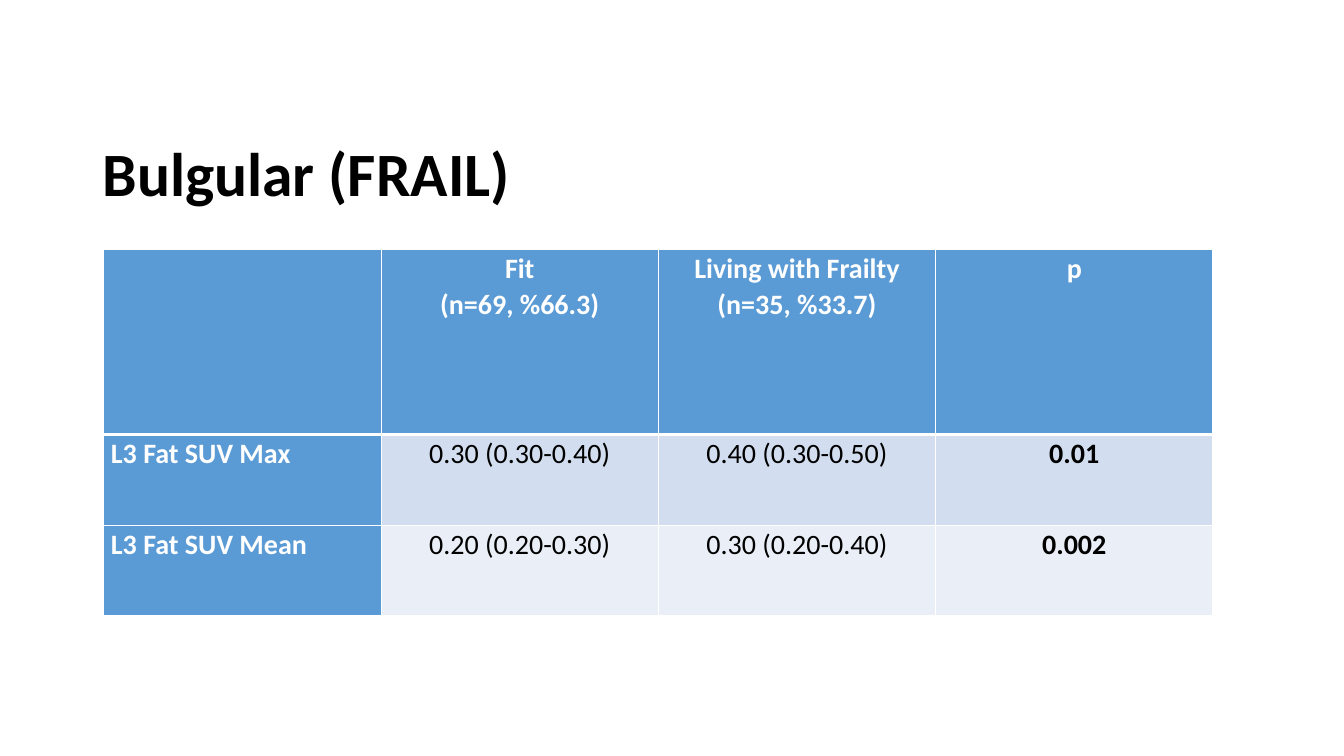
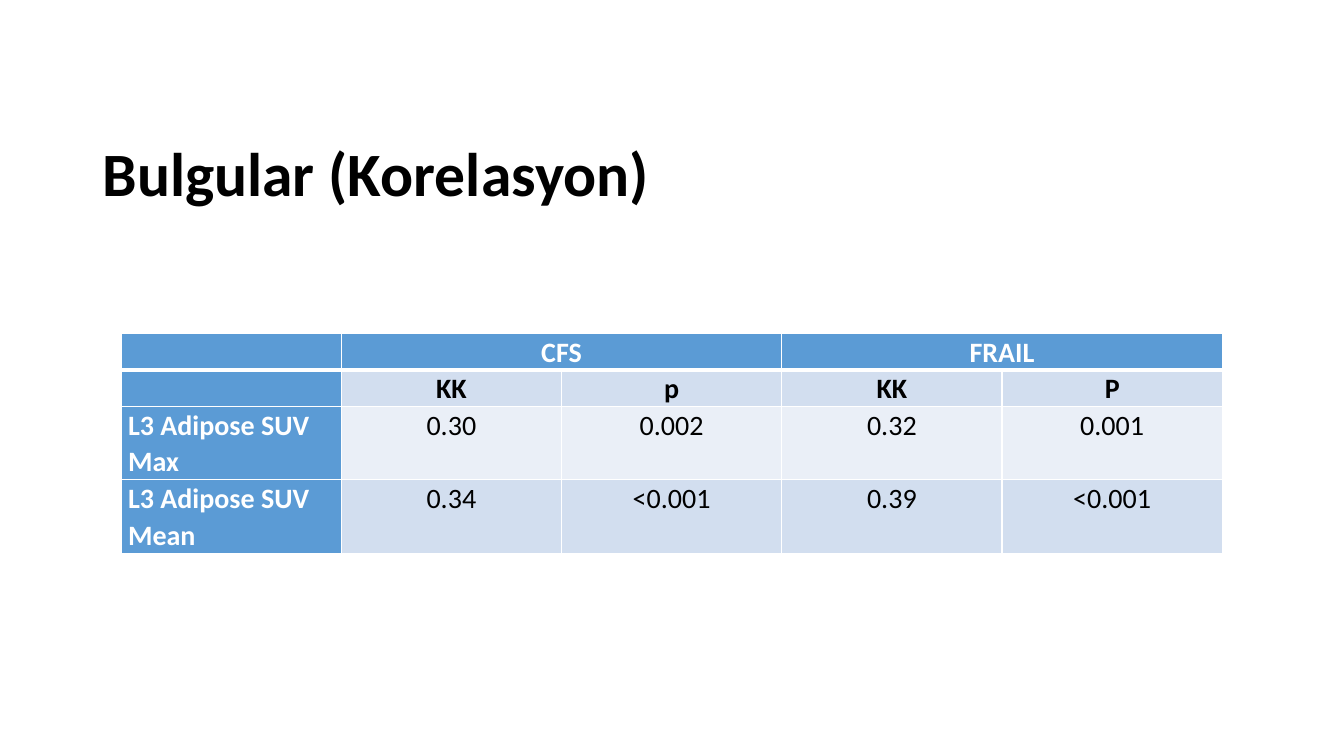
"""Build two findings slides, each with a title and a table."""
from lxml.etree import SubElement
from pptx import Presentation
from pptx.dml.color import RGBColor
from pptx.enum.text import MSO_ANCHOR, PP_ALIGN
from pptx.oxml.ns import qn
from pptx.util import Inches, Pt

BLUE = RGBColor(0x5B, 0x9B, 0xD5)
BANDS = (RGBColor(0xD2, 0xDE, 0xEF), RGBColor(0xEA, 0xEF, 0xF7))
WHITE = RGBColor(0xFF, 0xFF, 0xFF)
BLACK = RGBColor(0x00, 0x00, 0x00)
FONT = "Calibri"

FINDINGS = [
    {
        "title": "Bulgular (FRAIL)",
        "left": 1.03, "top": 2.47, "column_width": 2.75,
        "row_heights": (1.84, 0.9, 0.9),
        "bold_rows": (), "bold_columns": (3,),
        "rows": [
            ("", "Fit\n(n=69, %66.3)", "Living with Frailty (n=35, %33.7)", "p"),
            ("L3 Fat SUV Max", "0.30 (0.30-0.40)", "0.40 (0.30-0.50)", "0.01"),
            ("L3 Fat SUV Mean", "0.20 (0.20-0.30)", "0.30 (0.20-0.40)", "0.002"),
        ],
    },
    {
        "title": "Bulgular (Korelasyon)",
        "left": 1.2, "top": 3.31, "column_width": 2.185,
        "row_heights": (0.36, 0.36, 0.73, 0.73),
        "bold_rows": (1,), "bold_columns": (),
        "rows": [
            ("", "CFS", None, "FRAIL", None),
            ("", "KK", "p", "KK", "P"),
            ("L3 Adipose SUV Max", "0.30", "0.002", "0.32", "0.001"),
            ("L3 Adipose SUV Mean", "0.34", "<0.001", "0.39", "<0.001"),
        ],
    },
]


def style_paragraph(paragraph, size, color, bold, spacing, align):
    paragraph.line_spacing = spacing
    paragraph.alignment = align
    font = paragraph.font
    font.name, font.size, font.bold = FONT, Pt(size), bold
    font.color.rgb = color


def add_title(slide, title):
    box = slide.shapes.add_textbox(Inches(0.92), Inches(1.3), Inches(11.5), Inches(0.9))
    frame = box.text_frame
    frame.word_wrap = True
    frame.vertical_anchor = MSO_ANCHOR.MIDDLE
    frame.text = title
    style_paragraph(frame.paragraphs[0], 44, BLACK, True, 0.9, PP_ALIGN.LEFT)


def add_borders(cell, top, bottom):
    properties = cell._tc.get_or_add_tcPr()
    for side, width in (("L", 1), ("R", 1), ("T", top), ("B", bottom)):
        line = SubElement(properties, qn(f"a:ln{side}"), w=str(Pt(width)))
        fill = SubElement(line, qn("a:solidFill"))
        SubElement(fill, qn("a:srgbClr"), val=str(WHITE))


def fill_cell(cell, text, row, column, bold):
    heading = row == 0 or column == 0
    cell.margin_left = cell.margin_right = Inches(0.07)
    cell.margin_top = cell.margin_bottom = 0
    add_borders(cell, top=3 if row == 1 else 1, bottom=3 if row == 0 else 1)
    cell.fill.solid()
    cell.fill.fore_color.rgb = BLUE if heading else BANDS[(row - 1) % 2]
    cell.text = text or ""
    align = PP_ALIGN.CENTER if column else PP_ALIGN.LEFT
    for paragraph in cell.text_frame.paragraphs:
        style_paragraph(paragraph, 20, WHITE if heading else BLACK, heading or bold, 1.07, align)


def add_findings_table(slide, finding):
    rows, heights = finding["rows"], finding["row_heights"]
    width = Inches(finding["column_width"])
    columns = len(rows[0])
    table = slide.shapes.add_table(
        len(rows), columns, Inches(finding["left"]), Inches(finding["top"]),
        width * columns, Inches(sum(heights))).table
    table.first_col = True
    for column in table.columns:
        column.width = width
    for r, (texts, height) in enumerate(zip(rows, heights)):
        table.rows[r].height = Inches(height)
        for c, text in enumerate(texts):
            bold = r in finding["bold_rows"] or c in finding["bold_columns"]
            fill_cell(table.cell(r, c), text, r, c, bold)
            if text is None:
                table.cell(r, c - 1).merge(table.cell(r, c))


def main():
    deck = Presentation()
    deck.slide_width, deck.slide_height = Inches(13.33), Inches(7.5)
    for finding in FINDINGS:
        slide = deck.slides.add_slide(deck.slide_layouts[6])
        add_title(slide, finding["title"])
        add_findings_table(slide, finding)
    deck.save("out.pptx")


if __name__ == "__main__":
    main()
